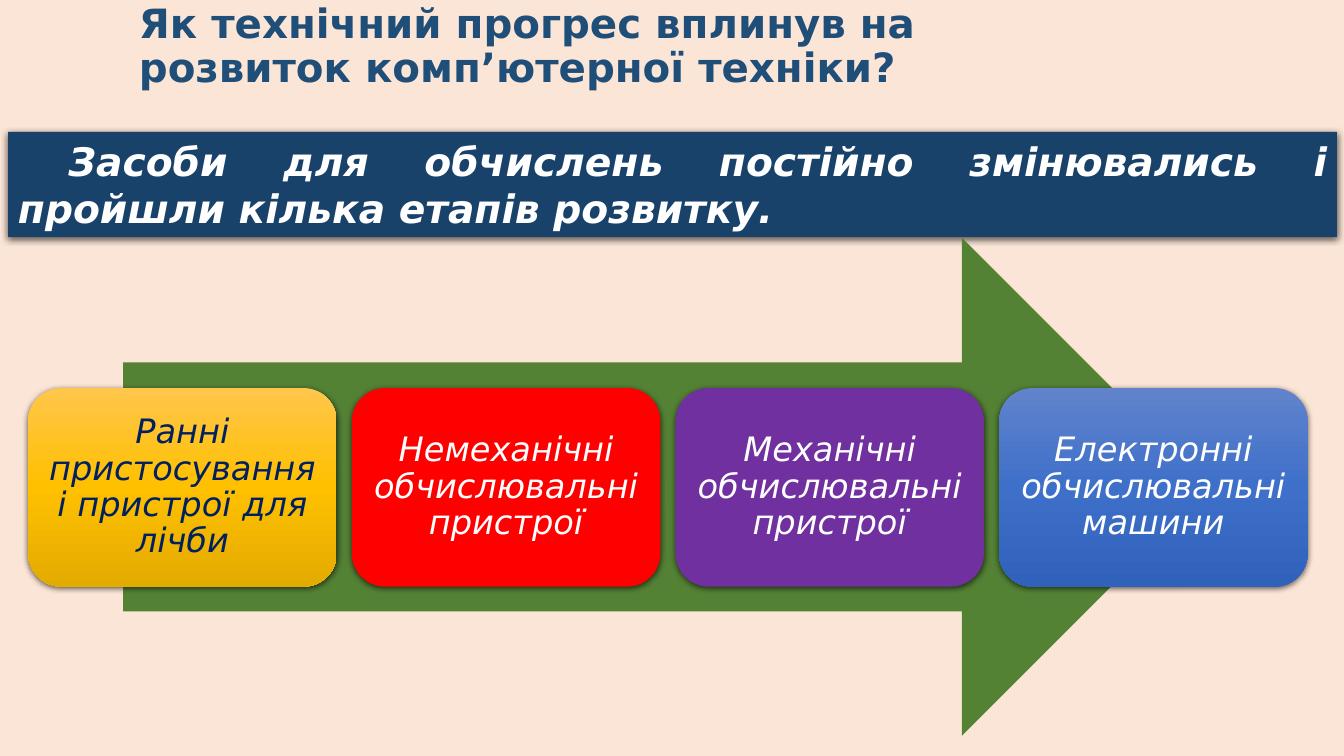
from copy import deepcopy
from lxml.etree import SubElement
from pptx import Presentation
from pptx.dml.color import RGBColor
from pptx.enum.shapes import MSO_SHAPE
from pptx.enum.text import MSO_ANCHOR, MSO_AUTO_SIZE, PP_ALIGN
from pptx.oxml.ns import qn
from pptx.util import Emu, Pt

PX = 9144
PEACH = RGBColor(0xFB, 0xE5, 0xD6)
TITLE_BLUE = RGBColor(0x1F, 0x4E, 0x79)
BANNER_BLUE = RGBColor(0x19, 0x42, 0x6B)
GREEN = RGBColor(0x54, 0x82, 0x35)
RED = RGBColor(0xFF, 0x00, 0x00)
PURPLE = RGBColor(0x70, 0x30, 0xA0)
NAVY = RGBColor(0x00, 0x20, 0x60)
WHITE = RGBColor(0xFF, 0xFF, 0xFF)
BLACK = RGBColor(0x00, 0x00, 0x00)
GOLD = (RGBColor(0xFF, 0xC6, 0x4B), RGBColor(0xFF, 0xC0, 0x00), RGBColor(0xE3, 0xAB, 0x00))
BLUE = (RGBColor(0x61, 0x83, 0xCB), RGBColor(0x3E, 0x70, 0xCA), RGBColor(0x30, 0x62, 0xBB))

CARDS = [
    ("Ранні пристосування і пристрої для лічби", GOLD, NAVY),
    ("Немеханічні обчислювальні пристрої", RED, WHITE),
    ("Механічні обчислювальні пристрої", PURPLE, WHITE),
    ("Електронні обчислювальні машини", BLUE, WHITE),
]


def px(*values):
    return [Emu(v * PX) for v in values]


class Deck:
    font = "DejaVu Sans"

    def __init__(self, width, height, background):
        self.prs = Presentation()
        self.prs.slide_width, self.prs.slide_height = px(width, height)
        self.s = self.prs.slides.add_slide(self.prs.slide_layouts[6])
        fill = self.s.background.fill
        fill.solid()
        fill.fore_color.rgb = background

    def label(self, sp, text, color, frame, para, font):
        tf = sp.text_frame
        for name, value in {"word_wrap": True, **frame}.items():
            setattr(tf, name, value)
        p = tf.paragraphs[0]
        for name, value in para.items():
            setattr(p, name, value)
        r = p.add_run()
        r.text = text
        for name, value in {"name": self.font, **font}.items():
            setattr(r.font, name, value)
        r.font.color.rgb = color
        return p

    def text(self, box, *content):
        return self.label(self.s.shapes.add_textbox(*px(*box)), *content)

    def shape(self, kind, box, paint, shadow=False):
        sp = self.s.shapes.add_shape(kind, *px(*box))
        sp.line.fill.background()
        sp.shadow.inherit = False
        if isinstance(paint, RGBColor):
            sp.fill.solid()
            sp.fill.fore_color.rgb = paint
        else:
            self.gradient(sp, paint)
        if shadow:
            self.add_shadow(sp)
        return sp

    def gradient(self, sp, colors):
        sp.fill.gradient()
        sp.fill.gradient_angle = 270
        stops = sp._element.spPr.find(".//" + qn("a:gsLst"))
        stops.append(deepcopy(stops[-1]))
        for i, (stop, color) in enumerate(zip(sp.fill.gradient_stops, colors)):
            stop.position = i / (len(colors) - 1)
            stop.color.rgb = color

    def add_shadow(self, sp):
        effects = sp._element.spPr.find(qn("a:effectLst"))
        outer = SubElement(effects, qn("a:outerShdw"), blurRad=str(Pt(4.5)),
                           dist=str(Pt(1.5)), dir="5400000", algn="ctr", rotWithShape="0")
        color = SubElement(outer, qn("a:srgbClr"), val=str(BLACK))
        SubElement(color, qn("a:alpha"), val="63000")


def main():
    deck = Deck(1333, 750, PEACH)
    deck.text((128, 18, 990, 58),
              "Як технічний прогрес вплинув на розвиток комп’ютерної техніки?", TITLE_BLUE,
              {"vertical_anchor": MSO_ANCHOR.MIDDLE},
              {"alignment": PP_ALIGN.LEFT, "line_spacing": 0.9},
              {"size": Pt(28.8), "bold": True})

    banner = deck.shape(MSO_SHAPE.RECTANGLE, (8, 131, 1318, 104), BANNER_BLUE, shadow=True)
    p = deck.label(banner, "Засоби для обчислень постійно змінювались і пройшли кілька етапів розвитку.",
                   WHITE,
                   {"vertical_anchor": MSO_ANCHOR.TOP, "auto_size": MSO_AUTO_SIZE.SHAPE_TO_FIT_TEXT},
                   {"alignment": PP_ALIGN.JUSTIFY},
                   {"size": Pt(28), "bold": True, "italic": True})
    p._p.get_or_add_pPr().set("indent", str(50 * PX))

    deck.shape(MSO_SHAPE.RIGHT_ARROW, (122, 236, 1079, 494), GREEN)
    margins = dict.fromkeys(("margin_left", "margin_top", "margin_right", "margin_bottom"), Emu(10 * PX))
    for i, (text, paint, color) in enumerate(CARDS):
        card = deck.shape(MSO_SHAPE.ROUNDED_RECTANGLE, (28 + 321 * i, 385, 306, 197), paint, shadow=True)
        deck.label(card, text, color,
                   {"vertical_anchor": MSO_ANCHOR.MIDDLE, **margins},
                   {"alignment": PP_ALIGN.CENTER, "line_spacing": 0.9},
                   {"size": Pt(24), "italic": True})
    deck.prs.save("out.pptx")


if __name__ == "__main__":
    main()
